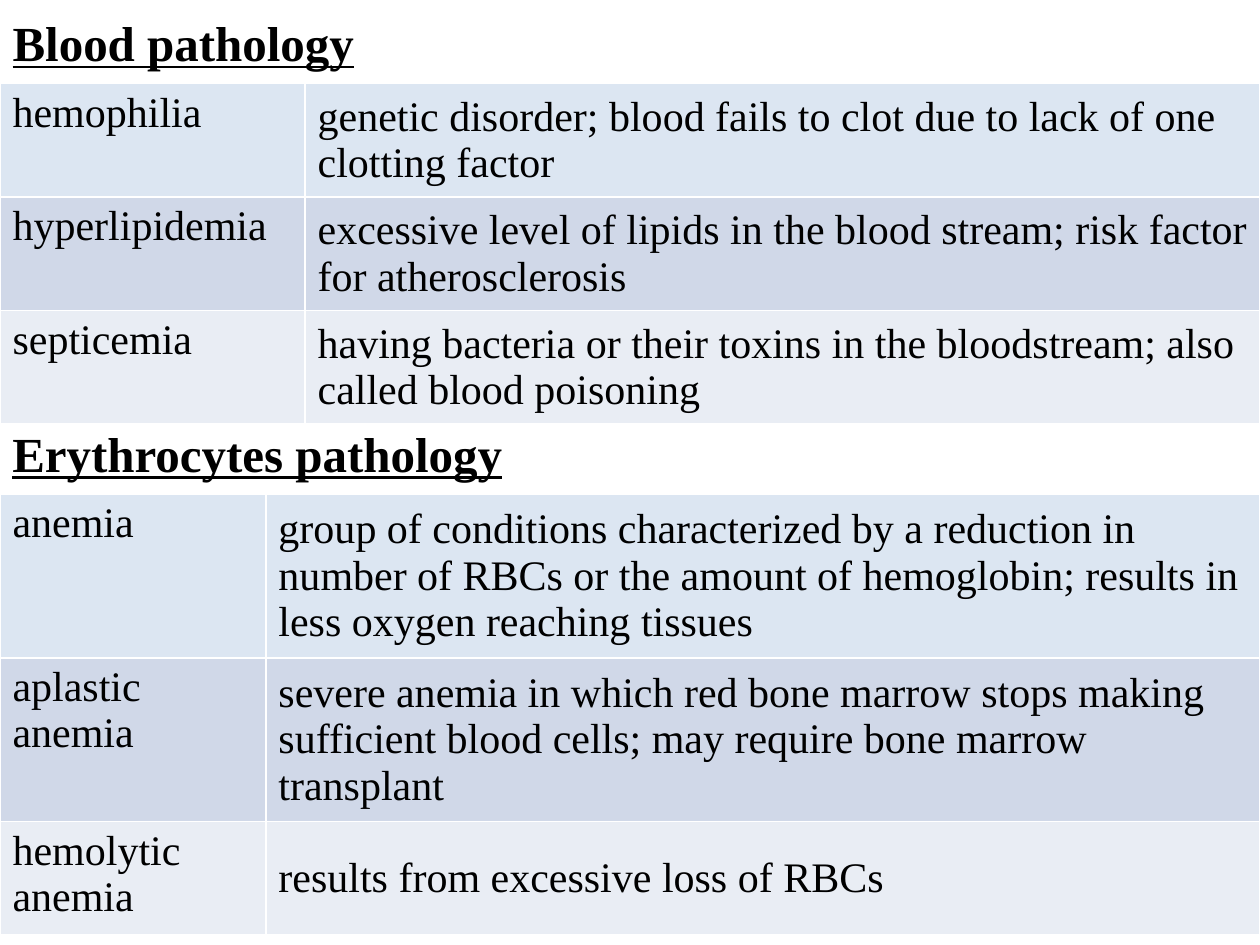
from dataclasses import dataclass

import pptx
import pptx.dml.color
import pptx.enum.text
import pptx.util

Cm, Pt = pptx.util.Cm, pptx.util.Pt
ANCHOR = pptx.enum.text.MSO_ANCHOR


@dataclass(frozen=True)
class Theme:
    font: str = "Times New Roman"
    text: str = "000000"
    row_fills: tuple = ("DCE6F2", "D0D8E8", "E9EDF4")
    heading_size: int = 28
    body_size: int = 24


THEME = Theme()
SLIDE_W, SLIDE_H = 25.4, 19.05
HEADING_H = 1.55

BLOOD = [
    ("hemophilia",
     "genetic disorder; blood fails to clot due to lack of one clotting factor"),
    ("hyperlipidemia",
     "excessive level of lipids in the blood stream; risk factor for atherosclerosis"),
    ("septicemia",
     "having bacteria or their toxins in the bloodstream; also called blood poisoning"),
]
ERYTHROCYTES = [
    ("anemia",
     "group of conditions characterized by a reduction in number of RBCs or the "
     "amount of hemoglobin; results in less oxygen reaching tissues"),
    ("aplastic anemia",
     "severe anemia in which red bone marrow stops making sufficient blood cells; "
     "may require bone marrow transplant"),
    ("hemolytic anemia", "results from excessive loss of RBCs"),
]


def rgb(value):
    return pptx.dml.color.RGBColor.from_string(value)


def format_text(tf, size, bold=False, underline=False):
    for p in tf.paragraphs:
        p.alignment = pptx.enum.text.PP_ALIGN.LEFT
        for r in p.runs:
            r.font.name = THEME.font
            r.font.size = Pt(size)
            r.font.bold = bold
            r.font.underline = underline
            r.font.color.rgb = rgb(THEME.text)


def add_heading(sp, text, left, top, width):
    """Place the heading in a placeholder or text box."""
    sp.left, sp.top, sp.width, sp.height = map(Cm, (left, top, width, HEADING_H))
    tf = sp.text_frame
    tf.text = text
    tf.word_wrap = True
    tf.auto_size = pptx.enum.text.MSO_AUTO_SIZE.NONE
    tf.vertical_anchor = ANCHOR.TOP
    format_text(tf, THEME.heading_size, bold=True, underline=True)


def add_terms(s, rows, left, top, width, term_w, row_heights):
    """Add a table of terms and their definitions."""
    frame = s.shapes.add_table(len(rows), 2, Cm(left), Cm(top),
                               Cm(width), Cm(sum(row_heights)))
    table = frame.table
    table.columns[0].width = Cm(term_w)
    table.columns[1].width = Cm(width - term_w)
    for i, (texts, height, fill) in enumerate(zip(rows, row_heights, THEME.row_fills)):
        table.rows[i].height = Cm(height)
        for j, text in enumerate(texts):
            cell = table.cell(i, j)
            cell.fill.solid()
            cell.fill.fore_color.rgb = rgb(fill)
            cell.text_frame.text = text
            format_text(cell.text_frame, THEME.body_size)
        definition = table.cell(i, 1)
        definition.vertical_anchor = ANCHOR.MIDDLE
        definition.text_frame.paragraphs[0].space_before = Pt(0.2 * THEME.body_size)


def add_section(s, sp, heading, rows, top, term_w, row_heights):
    """Fill a full-width band with a heading and the table below it."""
    add_heading(sp, heading, 0, top, SLIDE_W)
    add_terms(s, rows, 0, top + HEADING_H, SLIDE_W, term_w, row_heights)


def main():
    prs = pptx.Presentation()
    prs.slide_width, prs.slide_height = Cm(SLIDE_W), Cm(SLIDE_H)
    s = prs.slides.add_slide(prs.slide_layouts.get_by_name("Title Only"))
    add_section(s, s.shapes.title, "Blood pathology", BLOOD,
                top=0.13, term_w=6.15, row_heights=(2.29, 2.29, 2.29))
    add_section(s, s.shapes.add_textbox(0, 0, 0, 0), "Erythrocytes pathology",
                ERYTHROCYTES, top=8.41, term_w=5.36, row_heights=(3.3, 3.3, 2.29))
    prs.save("out.pptx")


if __name__ == "__main__":
    main()
